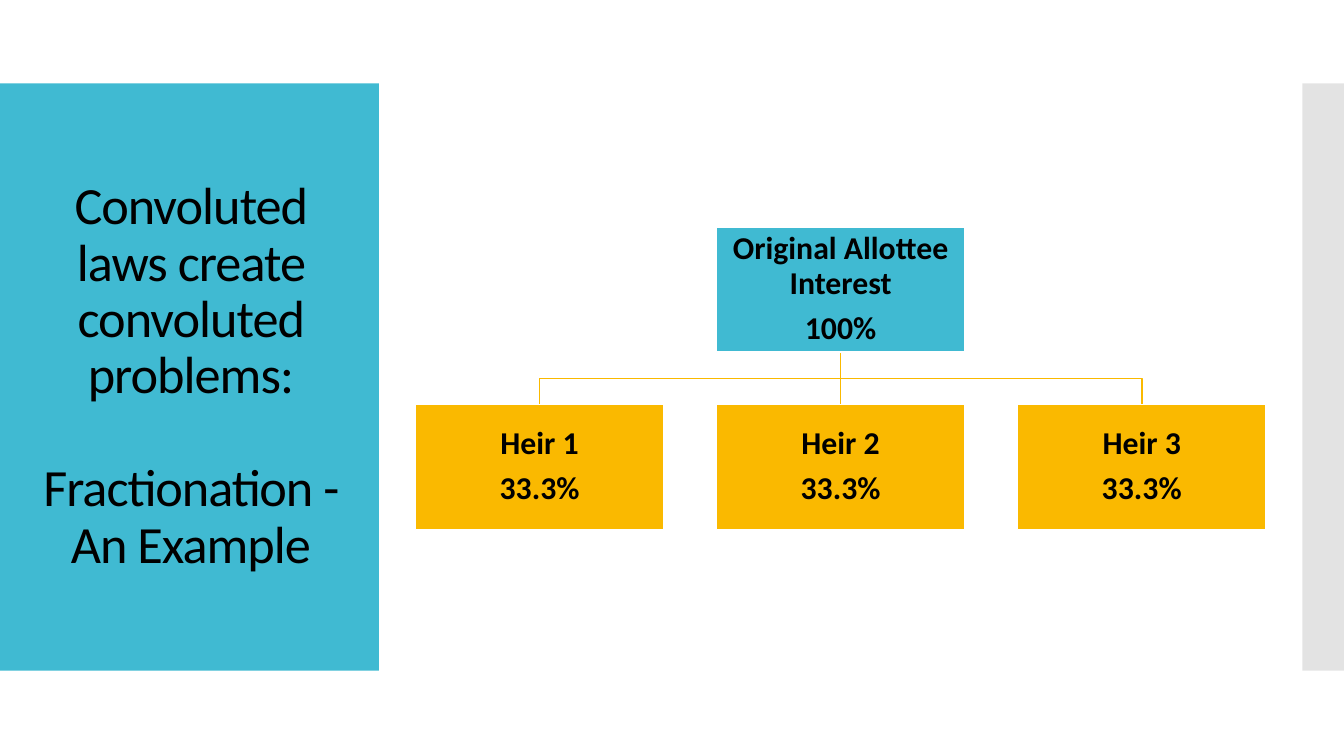
from lxml import etree
from pptx import Presentation
from pptx import util as u
from pptx.dml.color import RGBColor
from pptx.enum import shapes, text
from pptx.oxml.ns import qn

# Content
TITLE = ["Convoluted laws create convoluted problems:", "Fractionation - An Example"]
ROOT = ["Original Allottee Interest", "100%"]
HEIRS = [["Heir 1", "33.3%"], ["Heir 2", "33.3%"], ["Heir 3", "33.3%"]]

COLORS = {"teal": "40BAD2", "gold": "FAB900", "grey": "C8C8C8",
          "white": "FFFFFF", "black": "000000"}
FONT = "Calibri"
LINE_WIDTH = u.Pt(0.85)

# Tree grid
BOX_W, BOX_H = 1.85, 0.93
LEFT, PITCH = 3.09, 2.24
ROOT_TOP, HEIR_TOP = 1.69, 3.01
ROOT_BOTTOM = ROOT_TOP + BOX_H
MIDDLE = len(HEIRS) // 2


def rgb(name):
    return RGBColor.from_string(COLORS[name])


def add_rectangle(left, top, width, height, fill):
    box = page.shapes.add_shape(
        shapes.MSO_SHAPE.RECTANGLE, *map(u.Inches, (left, top, width, height)))
    box.shadow.inherit = False
    box.fill.solid()
    box.fill.fore_color.rgb = rgb(fill)
    box.line.fill.background()
    return box


def format_frame(frame):
    frame.word_wrap = True
    frame.vertical_anchor = text.MSO_ANCHOR.MIDDLE


def format_para(para):
    para.alignment = text.PP_ALIGN.CENTER
    para.line_spacing = 0.9


def add_span(para, words, size, bold):
    span = para.add_run()
    span.text = words
    span.font.name = FONT
    span.font.size = u.Pt(size)
    span.font.bold = bold
    span.font.color.rgb = rgb("black")
    return span


def add_box(left, top, lines, fill):
    box = add_rectangle(left, top, BOX_W, BOX_H, fill)
    box.line.color.rgb = rgb("white")
    box.line.width = LINE_WIDTH
    frame = box.text_frame
    format_frame(frame)
    frame.margin_left = frame.margin_right = u.Inches(0.01)
    frame.margin_top = frame.margin_bottom = u.Inches(0.01)
    for index, line in enumerate(lines):
        para = frame.add_paragraph() if index else frame.paragraphs[0]
        format_para(para)
        para.space_after = u.Pt(6)
        add_span(para, line, 17, True)
    return box


def style_branch(branch):
    branch.line.color.rgb = rgb("gold")
    branch.line.width = LINE_WIDTH


deck = Presentation()
deck.slide_width = u.Inches(10)
deck.slide_height = deck.slide_width * 9 // 16
page = deck.slides.add_slide(deck.slide_layouts[5])

# Side bands
add_rectangle(0, 0.62, 2.82, 4.37, "teal")
edge = add_rectangle(9.69, 0.62, 0.31, 4.37, "grey")
tint = edge.fill._xPr.find(qn("a:solidFill"))[0]
etree.SubElement(tint, qn("a:alpha"), val="50000")

# Title, raised above the bands
title = page.shapes.title
title.left, title.top = u.Inches(0.21), u.Inches(0.92)
title.width, title.height = u.Inches(2.42), u.Inches(3.77)
format_frame(title.text_frame)
title.text_frame.auto_size = text.MSO_AUTO_SIZE.NONE
para = title.text_frame.paragraphs[0]
format_para(para)
para.space_before = u.Pt(0)
for index, line in enumerate(TITLE):
    if index:
        para.add_line_break()
        para.add_line_break()
    span = add_span(para, line, 28, False)
    span.font._element.set("spc", "-50")
for line_break in para._p.findall(qn("a:br")):
    etree.SubElement(line_break, qn("a:rPr"), sz="2800")
page.shapes._spTree.append(title._element)

# Elbow branches to the outer heirs
lefts = [LEFT + PITCH * i for i in range(len(HEIRS))]
centers = [left + BOX_W / 2 for left in lefts]
root_x = centers[MIDDLE]
bend = (ROOT_BOTTOM + HEIR_TOP) / 2
for i, x in enumerate(centers):
    if i == MIDDLE:
        continue
    start, *corners = [
        (u.Inches(across), u.Inches(down)) for across, down in
        ((root_x, ROOT_BOTTOM), (root_x, bend), (x, bend), (x, HEIR_TOP))]
    builder = page.shapes.build_freeform(*start)
    builder.add_line_segments(corners, close=False)
    branch = builder.convert_to_shape()
    branch.shadow.inherit = False
    branch.fill.background()
    style_branch(branch)

# Straight branch to the middle heir
stem = page.shapes.add_connector(
    shapes.MSO_CONNECTOR.STRAIGHT, *map(u.Inches, (root_x, ROOT_BOTTOM, root_x, HEIR_TOP)))
style_branch(stem)
etree.SubElement(stem._element.spPr, qn("a:effectLst"))

# Boxes
root = add_box(lefts[MIDDLE], ROOT_TOP, ROOT, "teal")
heirs = [add_box(left, HEIR_TOP, lines, "gold") for left, lines in zip(lefts, HEIRS)]
stem.begin_connect(root, 2)
stem.end_connect(heirs[MIDDLE], 0)

deck.save("out.pptx")
